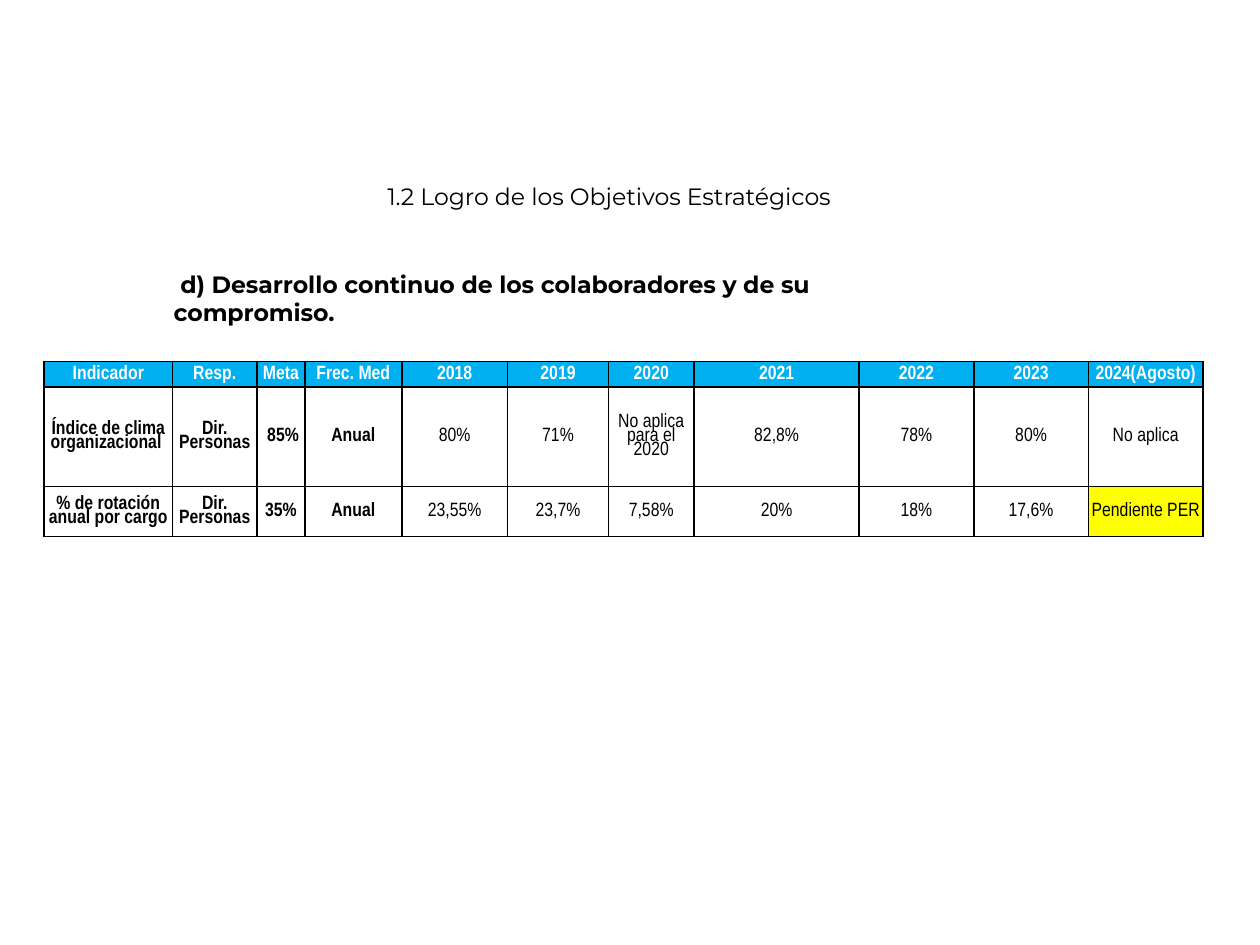
import lxml.etree
import pptx
import pptx.dml.color
import pptx.enum.text
import pptx.oxml.ns
import pptx.util

COLORS = {"black": "000000", "white": "FFFFFF", "header": "00B0F0", "pending": "FFFF00"}
ALIGN = pptx.enum.text.PP_ALIGN
MIDDLE = pptx.enum.text.MSO_ANCHOR.MIDDLE

COLUMN_WIDTHS = [10.2, 6.7, 3.8, 7.7, 8.4, 8, 6.8, 13.1, 9.1, 9.1, 9.1]
ROW_HEIGHTS = [2, 7.9, 4]
INDICATORS = [
    ["Indicador", "Resp.", "Meta", "Frec. Med", "2018", "2019", "2020", "2021",
     "2022", "2023", "2024(Agosto)"],
    ["Índice de clima organizacional ", "Dir. Personas", " 85%", "Anual", "80%", "71%",
     "No aplica para el 2020", "82,8%", "78%", "80%", "No aplica"],
    ["% de rotación anual por cargo", "Dir. Personas", "35%", "Anual", "23,55%", "23,7%",
     "7,58%", "20%", "18%", "17,6%", "Pendiente PER"],
]
LABEL_COLUMNS = 4


def rgb(name):
    return pptx.dml.color.RGBColor.from_string(COLORS[name])


class SlideBuilder:
    """Style and current slide; lengths are in cells of a 100 by 75 grid."""

    heading_font, heading_size = "Montserrat", 13.5
    table_font, table_size = "Arial Narrow", 11

    def __init__(self, presentation):
        self.unit = presentation.slide_width // 100
        self.slide = presentation.slides.add_slide(presentation.slide_layouts[6])

    def grid(self, *cells):
        return [round(cell * self.unit) for cell in cells]

    def format_paragraph(self, paragraph, font, size, color, bold, align):
        paragraph.alignment = align
        for run in paragraph.runs:
            run.font.name = font
            run.font.size = pptx.util.Pt(size)
            run.font.bold = bold
            run.font.color.rgb = rgb(color)

    def heading(self, text, box, bold=False, align=ALIGN.LEFT):
        text_frame = self.slide.shapes.add_textbox(*self.grid(*box)).text_frame
        text_frame.word_wrap = True
        text_frame.vertical_anchor = MIDDLE
        text_frame.text = text
        self.format_paragraph(text_frame.paragraphs[0], self.heading_font,
                              self.heading_size, "black", bold, align)

    def border(self, cell, width=1):
        properties = cell._tc.get_or_add_tcPr()
        for position, side in enumerate(("a:lnL", "a:lnR", "a:lnT", "a:lnB")):
            line = lxml.etree.Element(pptx.oxml.ns.qn(side), w=str(pptx.util.Pt(width)))
            fill = lxml.etree.SubElement(line, pptx.oxml.ns.qn("a:solidFill"))
            lxml.etree.SubElement(fill, pptx.oxml.ns.qn("a:srgbClr"), val=COLORS["black"])
            properties.insert(position, line)

    def cell(self, cell, text, fill, color, bold):
        cell.text = text
        cell.vertical_anchor = MIDDLE
        cell.margin_left = cell.margin_right = cell.margin_top = pptx.util.Inches(0.01)
        cell.margin_bottom = 0
        cell.fill.solid()
        cell.fill.fore_color.rgb = rgb(fill)
        self.border(cell)
        paragraph = cell.text_frame.paragraphs[0]
        paragraph.line_spacing = 0.8
        self.format_paragraph(paragraph, self.table_font, self.table_size,
                              color, bold, ALIGN.CENTER)

    def table(self, rows, left, top, widths, heights):
        box = self.grid(left, top, sum(widths), sum(heights))
        table = self.slide.shapes.add_table(len(rows), len(widths), *box).table
        for column, width in zip(table.columns, self.grid(*widths)):
            column.width = width
        for row, height in zip(table.rows, self.grid(*heights)):
            row.height = height
        for row_index, texts in enumerate(rows):
            header = row_index == 0
            for column_index, text in enumerate(texts):
                fill = "header" if header else "white"
                if text.startswith("Pendiente"):
                    fill = "pending"
                self.cell(table.cell(row_index, column_index), text, fill,
                          "white" if header else "black",
                          header or column_index < LABEL_COLUMNS)


def main():
    presentation = pptx.Presentation()
    presentation.slide_width = pptx.util.Inches(10)
    presentation.slide_height = pptx.util.Inches(7.5)
    builder = SlideBuilder(presentation)
    builder.heading(" 1.2 Logro de los Objetivos Estratégicos",
                    (17.7, 12.5, 60.8, 6.1), align=ALIGN.CENTER)
    builder.heading(" d) Desarrollo continuo de los colaboradores y de su compromiso.",
                    (12.8, 20.6, 60.5, 6.1), bold=True)
    builder.table(INDICATORS, 3.5, 28.7, COLUMN_WIDTHS, ROW_HEIGHTS)
    presentation.save("out.pptx")


if __name__ == "__main__":
    main()
